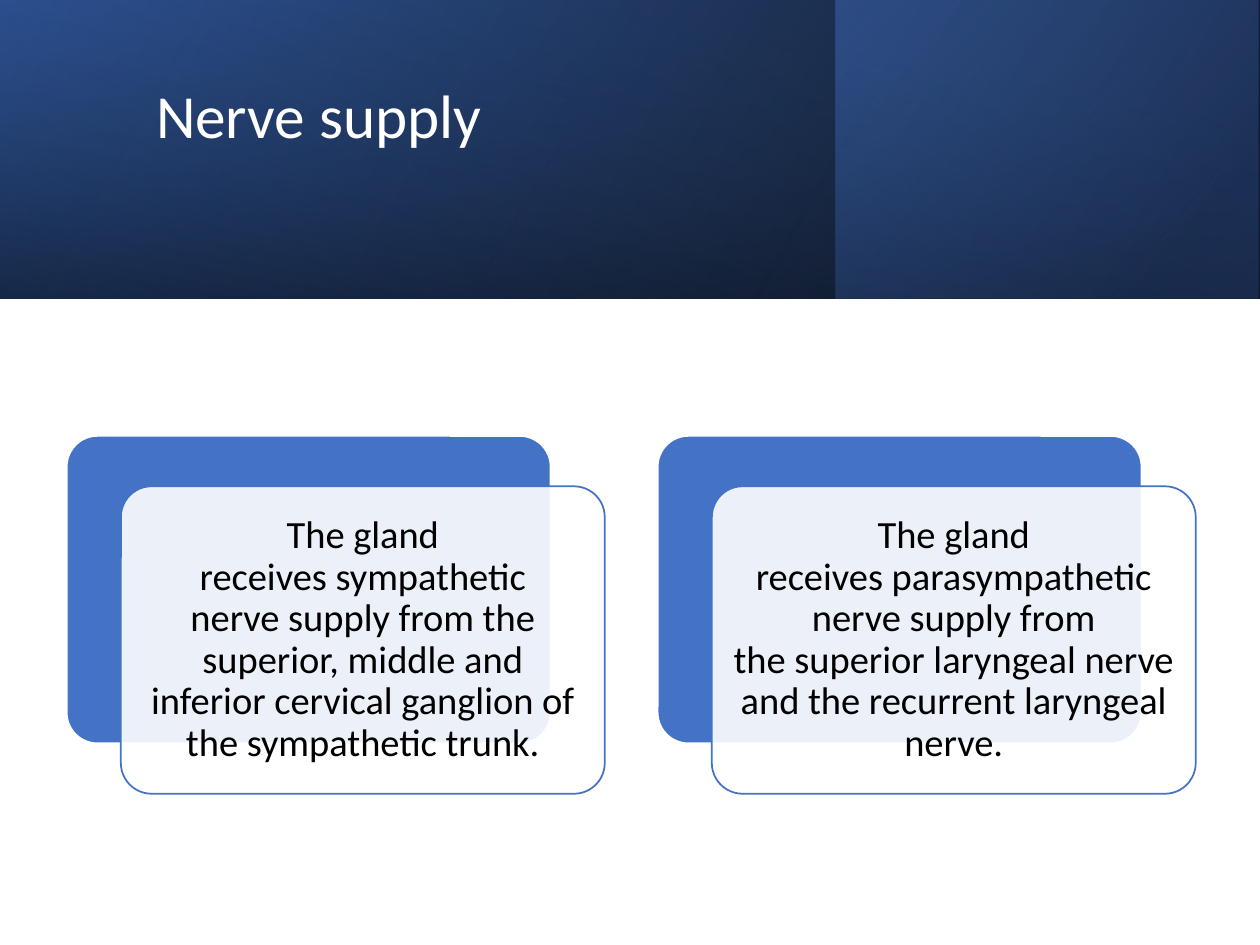
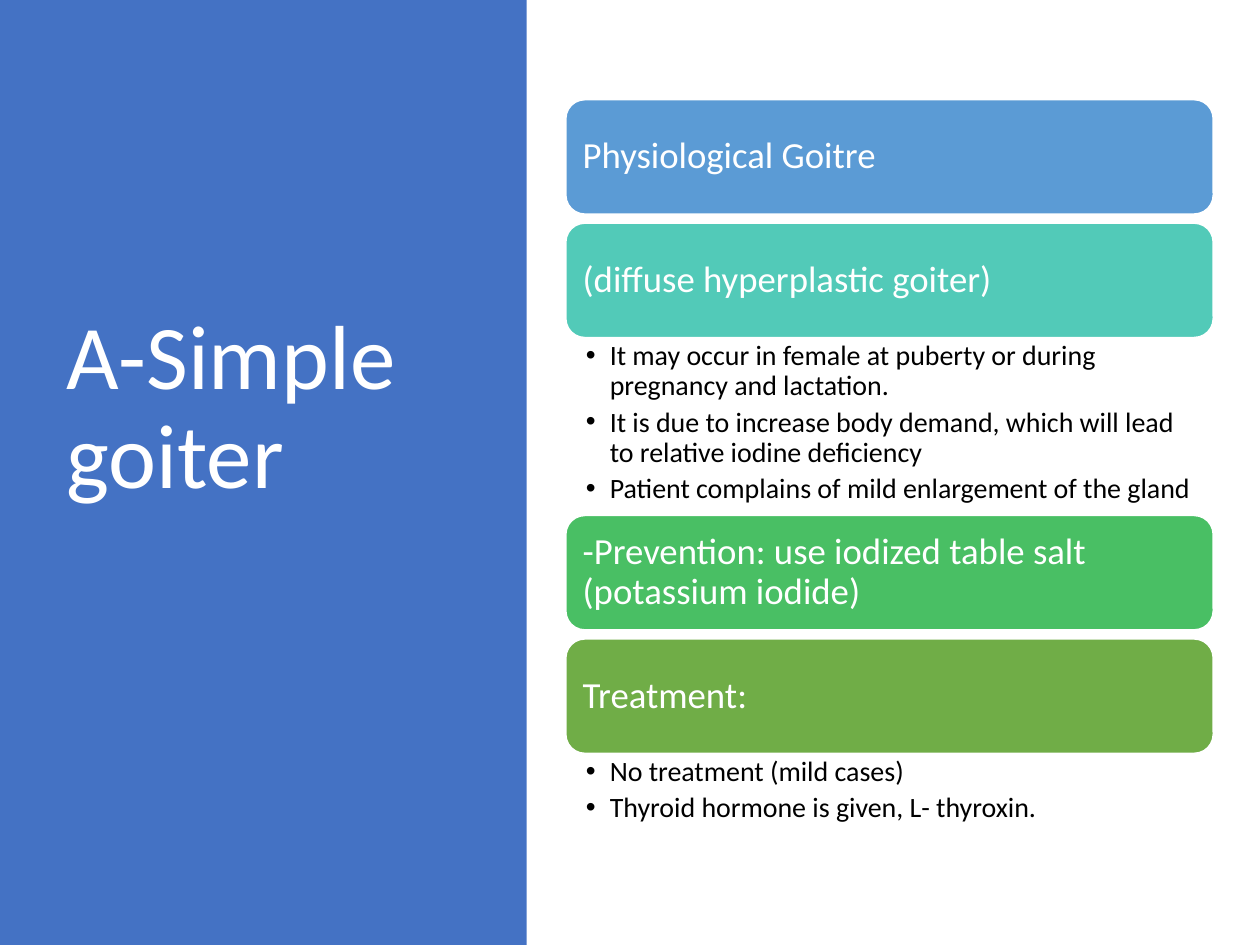
import pptx
import pptx.util
import pptx.dml.color
import pptx.enum.shapes
import pptx.enum.text
import pptx.oxml.ns
import lxml.etree

Inches, Pt = pptx.util.Inches, pptx.util.Pt
RGB = pptx.dml.color.RGBColor
SHAPE = pptx.enum.shapes.MSO_SHAPE
ALIGN = pptx.enum.text.PP_ALIGN
ANCHOR = pptx.enum.text.MSO_ANCHOR
qn = pptx.oxml.ns.qn

# Colours and type
WHITE, BLACK = RGB(255, 255, 255), RGB(0, 0, 0)
BLUE = RGB(0x44, 0x72, 0xC4)
DEEP = RGB(0x2F, 0x55, 0x97)
NAVY = RGB(0x20, 0x38, 0x64)
SKY = RGB(0x5B, 0x9B, 0xD5)
TEAL = RGB(0x52, 0xCA, 0xB8)
GREEN = RGB(0x49, 0xBF, 0x64)
LEAF = RGB(0x70, 0xAD, 0x47)
FONT, LEADING = "Calibri", 0.9
WIDE, HIGH = 10, 7.5

# Content; a tilde stands for a space that does not break
NERVES = [
    "The gland receives~sympathetic nerve~supply from the superior, "
    "middle and inferior cervical ganglion of the~sympathetic trunk.",
    "The gland receives~parasympathetic nerve~supply from "
    "the~superior laryngeal nerve and the~recurrent laryngeal nerve.",
]
GOITER = [  # heading, colour, points, height of the points
    ("Physiological Goitre", SKY, [], 0),
    ("(diffuse hyperplastic goiter)", TEAL, [
        "It may occur in female at puberty or during pregnancy and lactation.",
        "It is due to increase body demand, which will lead to relative "
        "iodine deficiency",
        "Patient complains of mild enlargement of the gland",
    ], 1.41),
    ("-Prevention: use iodized table salt (potassium iodide)", GREEN, [], 0),
    ("Treatment:", LEAF, [
        "No treatment (mild cases)",
        "Thyroid hormone is given, L- thyroxin.",
    ], 0.61),
]

# Header layers: box, turn, angle, stops of (place, colour, opacity)
BAND = 2.37
MID = (WIDE - BAND) / 2
LAYERS = [
    ((0, 0, WIDE, BAND), 0, 330, [(0, BLACK, 96), (1, DEEP, 100)]),
    ((6.63, 0, 3.36, BAND), 0, 320, [(0.19, NAVY, 68), (1, BLUE, 48)]),
    ((MID, -MID, BAND, WIDE), 270, 350,
     [(0.23, DEEP, 16), (0.99, BLACK, 45)]),
]


def fade(shape, shares):
    """Give each colour of the fill its opacity in percent."""
    for clr, share in zip(shape.element.spPr.iter(qn("a:srgbClr")), shares):
        if share < 100:
            alpha = lxml.etree.SubElement(clr, qn("a:alpha"))
            alpha.set("val", str(share * 1000))


def block(slide, box, fill=None, line=None, kind=SHAPE.RECTANGLE, adj=None):
    shape = slide.shapes.add_shape(kind, *map(Inches, box))
    shape.shadow.inherit = False
    if adj:
        shape.adjustments[0] = adj
    if fill is not None:
        shape.fill.solid()
        shape.fill.fore_color.rgb = fill
    if line is None:
        shape.line.fill.background()
    else:
        shape.line.color.rgb = line
        shape.line.width = Pt(1)
    return shape


def write(shape, lines, size, color, pad, align=ALIGN.LEFT,
          anchor=ANCHOR.MIDDLE):
    """Fill a shape with paragraphs; pad is (across, top, bottom)."""
    frame = shape.text_frame
    frame.word_wrap = True
    frame.vertical_anchor = anchor
    frame.margin_left = frame.margin_right = Inches(pad[0])
    frame.margin_top, frame.margin_bottom = Inches(pad[1]), Inches(pad[2])
    frame.text = "\n".join(lines).replace("~", chr(160))
    for para in frame.paragraphs:
        para.alignment = align
        para.line_spacing = LEADING
        para.font.name, para.font.size = FONT, Pt(size)
        para.font.color.rgb = color
    return frame.paragraphs


def title(slide, text, box, size):
    # One line of room below lifts the text above the middle
    room = size * 1.22 / 72
    shape = slide.shapes.add_textbox(*map(Inches, box))
    write(shape, [text], size, WHITE, (0.1, 0.05, 0.05 + room))


def points(slide, box, lines):
    shape = slide.shapes.add_textbox(*map(Inches, box))
    for para in write(shape, lines, 16, BLACK, (0.16, 0.03, 0.03),
                      anchor=ANCHOR.TOP):
        para.space_after = Pt(3.5)
        props = para._p.get_or_add_pPr()
        props.set("marL", str(Inches(0.19)))
        props.set("indent", str(-Inches(0.19)))
        face = lxml.etree.SubElement(props, qn("a:buFont"))
        face.set("typeface", "Arial")
        lxml.etree.SubElement(props, qn("a:buChar")).set("char", "•")
        # Bullets come before the default run style
        props.append(props.find(qn("a:defRPr")))
        # The bullet takes its size from the run
        for run in para.runs:
            run.font.size = para.font.size


def header(slide):
    for box, turn, angle, stops in LAYERS:
        shape = block(slide, box)
        shape.rotation = turn
        shape.element.spPr.xfrm.set("flipH", "1")
        shape.fill.gradient()
        shape.fill.gradient_angle = 360 - angle
        for stop, (place, color, _) in zip(shape.fill.gradient_stops, stops):
            stop.position = place
            stop.color.rgb = color
        fade(shape, [share for *_, share in stops])


def nerves(slide):
    header(slide)
    title(slide, "Nerve supply", (1.14, 0.38, 7.97, 1.72), 35)
    left, top, wide, high, pitch = 0.53, 3.46, 3.84, 2.44, 4.69
    for col, text in enumerate(NERVES):
        x = left + col * pitch
        block(slide, (x, top, wide, high), BLUE, WHITE,
              SHAPE.ROUNDED_RECTANGLE, 0.1)
        card = block(slide, (x + 0.43, top + 0.4, wide, high), WHITE, BLUE,
                     SHAPE.ROUNDED_RECTANGLE, 0.1)
        fade(card, [90])
        write(card, [text], 22, BLACK, (0.09,) * 3, ALIGN.CENTER)


def goiter(slide):
    block(slide, (0, 0, 4.18, HIGH), BLUE)
    title(slide, "A-Simple goiter", (0.43, 0.68, 3.12, 6.02), 52)
    left, y, wide, bar, gap = 4.49, 0.79, 5.14, 0.91, 0.07
    for head, color, lines, deep in GOITER:
        shape = block(slide, (left, y, wide, bar), color, WHITE,
                      SHAPE.ROUNDED_RECTANGLE)
        write(shape, [head], 21, WHITE, (0.09,) * 3)
        y += bar
        if lines:
            points(slide, (left, y, wide, deep), lines)
        y += deep or gap


def main():
    deck = pptx.Presentation()
    deck.slide_width, deck.slide_height = Inches(WIDE), Inches(HIGH)
    for build in (nerves, goiter):
        build(deck.slides.add_slide(deck.slide_layouts[6]))
    deck.save("out.pptx")


if __name__ == "__main__":
    main()
